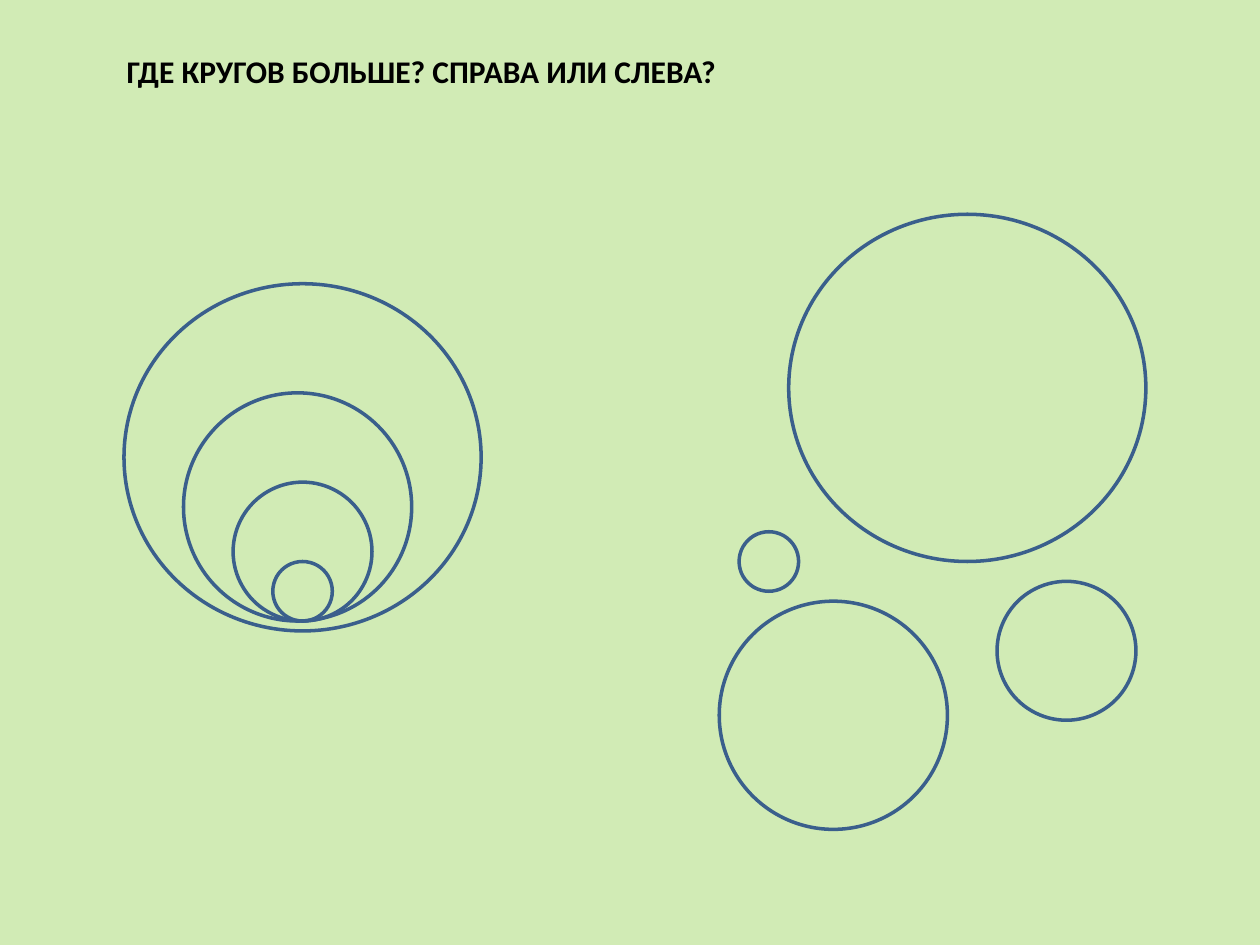
"""Builds a counting slide that compares nested circles with scattered ones."""
from pptx import Presentation
from pptx.dml.color import RGBColor
from pptx.enum.shapes import MSO_SHAPE
from pptx.enum.text import MSO_ANCHOR, MSO_AUTO_SIZE, PP_ALIGN
from pptx.util import Cm, Pt

COLORS = {"background": "D1EBB5", "outline": "3A5F8C", "question": "000000"}

presentation = Presentation()
presentation.slide_width, presentation.slide_height = Cm(25.4), Cm(19.05)
slide = presentation.slides.add_slide(presentation.slide_layouts[5])
slide.background.fill.solid()
slide.background.fill.fore_color.rgb = RGBColor.from_string(COLORS["background"])

question = slide.shapes.title
question.left, question.top, question.width, question.height = Cm(2.3), Cm(0.92), Cm(21.6), Cm(1.8)
question.text_frame.text = "ГДЕ КРУГОВ БОЛЬШЕ? СПРАВА ИЛИ СЛЕВА?"
frame_format = {
    "word_wrap": True,
    "auto_size": MSO_AUTO_SIZE.NONE,
    "vertical_anchor": MSO_ANCHOR.TOP,
}
for attribute, value in frame_format.items():
    setattr(question.text_frame, attribute, value)
wording = question.text_frame.paragraphs[0]
wording.alignment = PP_ALIGN.LEFT
question_font = wording.runs[0].font
for attribute, value in {"name": "Calibri", "size": Pt(18), "bold": True}.items():
    setattr(question_font, attribute, value)
question_font.color.rgb = RGBColor.from_string(COLORS["question"])

circle_sizes = [(7.2, 7), (4.6, 4.6), (2.8, 2.8), (1.2, 1.2)]
nested_corners = [(2.5, 5.72), (3.7, 7.92), (4.7, 9.72), (5.5, 11.32)]
scattered_corners = [(15.9, 4.32), (14.5, 12.12), (20.1, 11.72), (14.9, 10.72)]

for (width, height), *corners in zip(circle_sizes, nested_corners, scattered_corners):
    for left, top in corners:
        circle = slide.shapes.add_shape(
            MSO_SHAPE.OVAL, Cm(left), Cm(top), Cm(width), Cm(height)
        )
        circle.shadow.inherit = False
        circle.fill.background()
        circle.line.color.rgb = RGBColor.from_string(COLORS["outline"])
        circle.line.width = Pt(2)

presentation.save("out.pptx")
